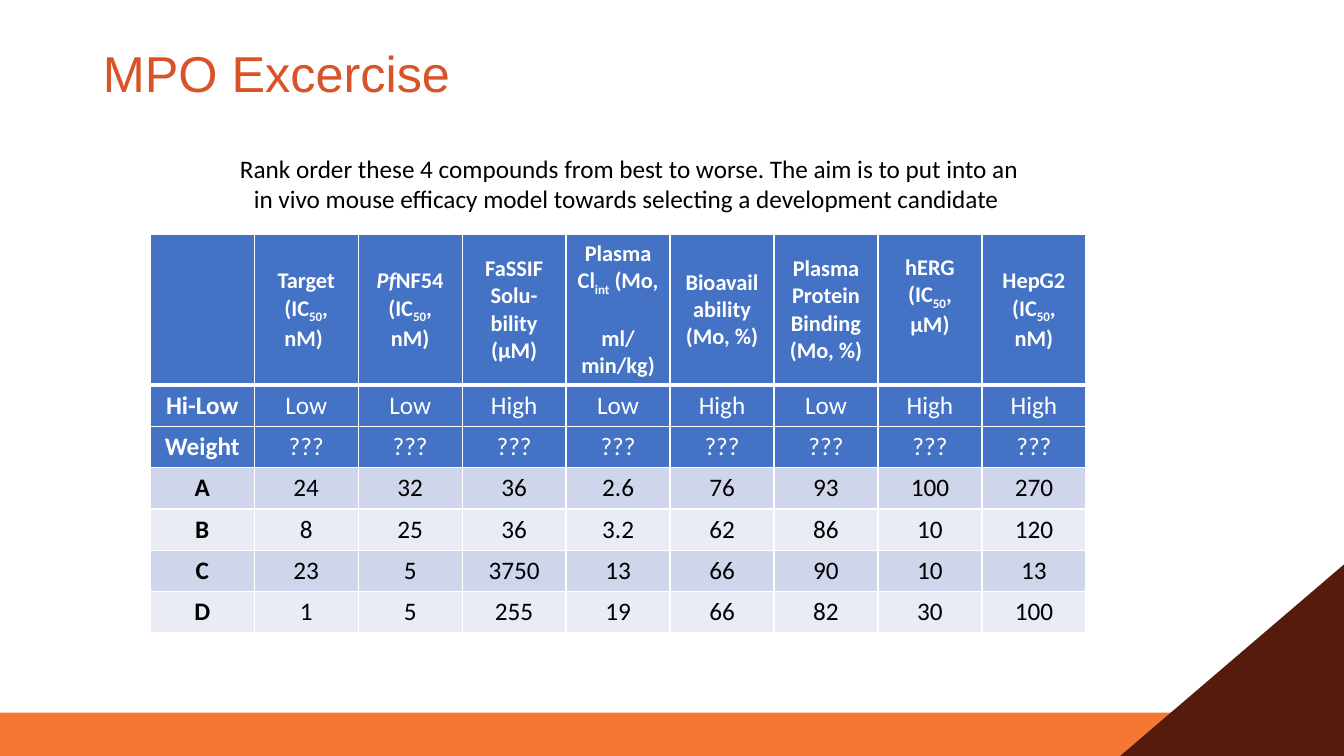
from dataclasses import dataclass

from lxml.etree import SubElement
from pptx import Presentation
from pptx.dml.color import RGBColor
from pptx.enum.shapes import MSO_SHAPE
from pptx.enum.text import MSO_ANCHOR, PP_ALIGN
from pptx.oxml.ns import qn
from pptx.util import Inches, Pt


@dataclass(frozen=True)
class Theme:
    title: str = "D85327"
    orange: str = "F47734"
    brown: str = "561B0D"
    blue: str = "4472C4"
    band_dark: str = "CFD5EA"
    band_light: str = "E9EBF5"
    white: str = "FFFFFF"
    black: str = "000000"
    title_font: str = "Arial"
    body_font: str = "Calibri"
    title_size: int = 36
    body_size: int = 18
    header_size: int = 16


T = Theme()
RUN_STYLES = {"50": ("baseline", "-25000"), "int": ("baseline", "-25000"), "Pf": ("i", "1")}


def add_runs(p, text, font, size, color, bold=False):
    """Add runs parted by "|"; subscripts and italics follow RUN_STYLES."""
    for part in text.split("|"):
        r = p.add_run()
        r.text = part
        formats = {"name": font, "size": Pt(size), "bold": bold}
        for name, value in formats.items():
            setattr(r.font, name, value)
        r.font.color.rgb = RGBColor.from_string(color)
        if part in RUN_STYLES:
            r.font._element.set(*RUN_STYLES[part])


def set_borders(cell, bottom):
    tc_pr = cell._tc.get_or_add_tcPr()
    widths = {"a:lnL": 1, "a:lnR": 1, "a:lnT": 1, "a:lnB": bottom}
    for i, (tag, width) in enumerate(widths.items()):
        ln = SubElement(tc_pr, qn(tag), w=str(Pt(width)))
        fill = SubElement(ln, qn("a:solidFill"))
        SubElement(fill, qn("a:srgbClr"), val=T.white)
        tc_pr.insert(i, ln)


prs = Presentation()
prs.slide_width, prs.slide_height = Inches(13.33), Inches(7.5)
s = prs.slides.add_slide(prs.slide_layouts[5])

# Footer bar and corner triangle
decor = [
    (MSO_SHAPE.RECTANGLE, (0, 7.07, 13.31, 0.43), T.orange),
    (MSO_SHAPE.ISOSCELES_TRIANGLE, (11.11, 5.6, 2.22, 1.9), T.brown),
]
for kind, box, color in decor:
    sp = s.shapes.add_shape(kind, *map(Inches, box))
    sp.shadow.inherit = False
    sp.fill.solid()
    sp.fill.fore_color.rgb = RGBColor.from_string(color)
    sp.line.fill.background()
    if kind == MSO_SHAPE.ISOSCELES_TRIANGLE:
        sp.adjustments[0] = 1

# Title
title = s.shapes.title
geometry = {"left": 0.92, "top": 0.4, "width": 7.47, "height": 0.71}
for name, value in geometry.items():
    setattr(title, name, Inches(value))
tf = title.text_frame
tf.vertical_anchor = MSO_ANCHOR.MIDDLE
p = tf.paragraphs[0]
p.alignment = PP_ALIGN.LEFT
p.line_spacing = 0.9
add_runs(p, "MPO Excercise", T.title_font, T.title_size, T.title)

# Compound table: "\n" parts paragraphs, "|" parts runs
headers = [
    "",
    "Target (IC|50|, nM) ",
    "Pf|NF54 (IC|50|, nM)",
    "FaSSIF\nSolu-bility\n(μM)",
    "Plasma Cl|int| (Mo,\nml/min/kg)",
    "Bioavailability (Mo, %)",
    "Plasma Protein Binding (Mo, %)",
    "hERG\n(IC|50|, μM)",
    "HepG2\n(IC|50|, nM)",
]
rows = [
    (T.blue, T.white, headers),
    (T.blue, T.white, ["Hi-Low", "Low", "Low", "High", "Low", "High", "Low", "High", "High"]),
    (T.blue, T.white, ["Weight"] + ["???"] * 8),
    (T.band_dark, T.black, ["A", "24", "32", "36", "2.6", "76", "93", "100", "270"]),
    (T.band_light, T.black, ["B", "8", "25", "36", "3.2", "62", "86", "10", "120"]),
    (T.band_dark, T.black, ["C", "23", "5", "3750", "13", "66", "90", "10", "13"]),
    (T.band_light, T.black, ["D", "1", "5", "255", "19", "66", "82", "30", "100"]),
]
header_height, row_height = 1.49, 0.41
table_height = header_height + row_height * (len(rows) - 1)
table = s.shapes.add_table(len(rows), len(headers), Inches(1.49), Inches(2.33),
                           Inches(9.28), Inches(table_height)).table
for i, (fill, color, texts) in enumerate(rows):
    is_header = i == 0
    table.rows[i].height = Inches(header_height if is_header else row_height)
    for j, text in enumerate(texts):
        cell = table.cell(i, j)
        cell.fill.solid()
        cell.fill.fore_color.rgb = RGBColor.from_string(fill)
        set_borders(cell, 3 if is_header else 1)
        if is_header:
            cell.vertical_anchor = MSO_ANCHOR.MIDDLE
        for k, line in enumerate(text.split("\n") if text else []):
            p = cell.text_frame.paragraphs[0] if k == 0 else cell.text_frame.add_paragraph()
            p.alignment = PP_ALIGN.CENTER
            add_runs(p, line, T.body_font, T.header_size if is_header else T.body_size,
                     color, bold=is_header or j == 0)

# The clearance unit sits one line lower, the hERG label one line higher
table.cell(0, 4).text_frame.paragraphs[1].space_before = Pt(19.5)
table.cell(0, 7).margin_bottom = Inches(0.32)

# Task text
tf = s.shapes.add_textbox(*map(Inches, (2.19, 1.47, 8.1, 0.71))).text_frame
tf.word_wrap = True
p = tf.paragraphs[0]
p.alignment = PP_ALIGN.CENTER
add_runs(p, "Rank order these 4 compounds from best to worse. The aim is to put into an in vivo "
            "mouse efficacy model towards selecting a development candidate ",
         T.body_font, T.body_size, T.black)

prs.save("out.pptx")
